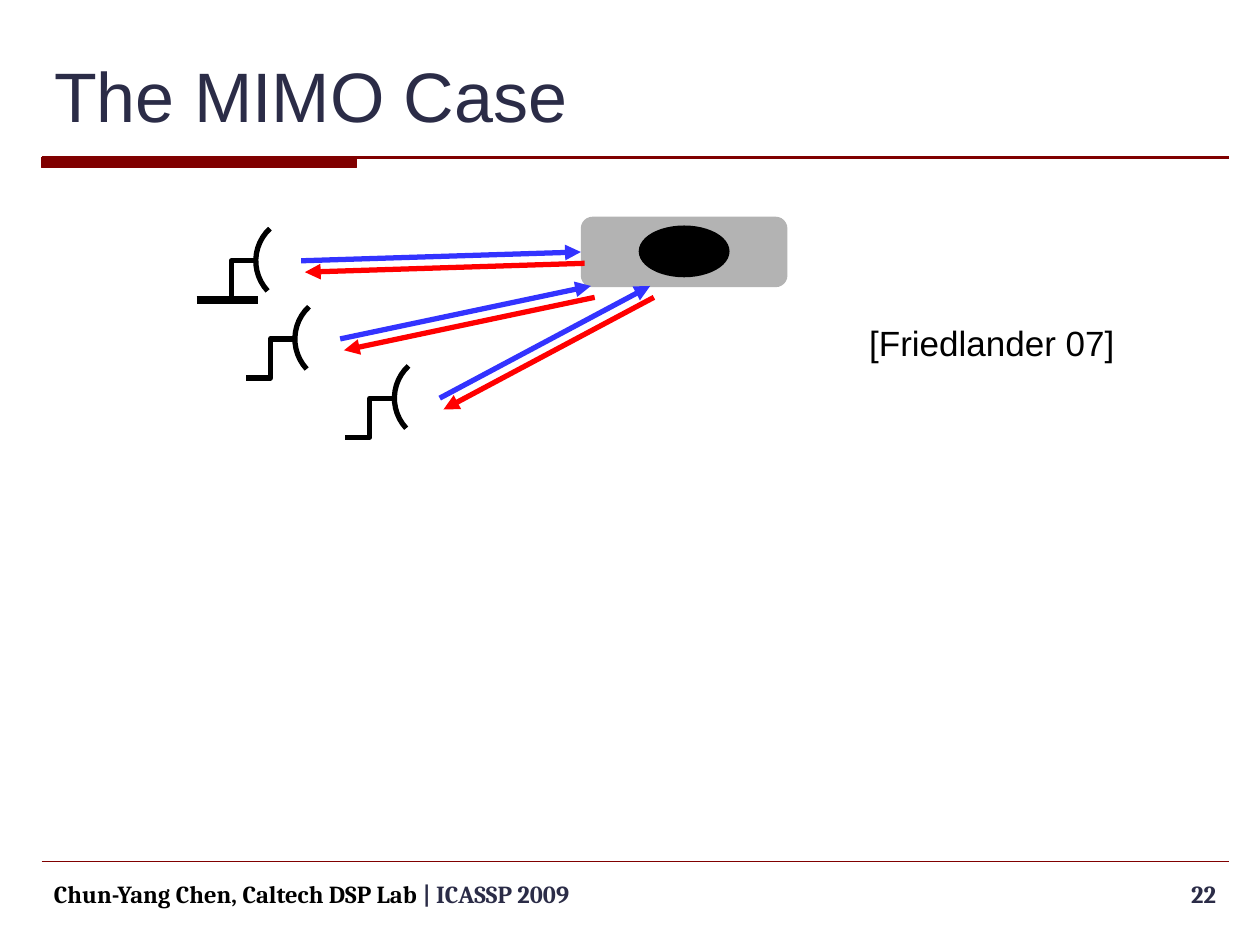
from dataclasses import dataclass

from lxml import etree
from pptx import Presentation
from pptx import util as u
from pptx.dml.color import RGBColor
from pptx.enum import shapes, text
from pptx.oxml.ns import qn


@dataclass(frozen=True)
class Theme:
    ink: str = "000000"
    navy: str = "2B2C47"
    rule: str = "800000"
    grey: str = "B3B3B3"
    white: str = "FFFFFF"
    sent: str = "3333FF"
    echo: str = "FF0000"
    sans: str = "Arial"
    serif: str = "Cambria"
    head: int = 40
    note: int = 20
    foot: int = 14


def put(par, words, size, font, color, bold=False, align=text.PP_ALIGN.LEFT):
    """Append a formatted run to a paragraph."""
    par.alignment = align
    run = par.add_run()
    run.text = words
    run.font.size = u.Pt(size)
    run.font.name = font
    run.font.bold = bold
    run.font.color.rgb = RGBColor.from_string(color)


class Deck:
    def __init__(self, theme):
        self.theme = theme
        self.prs = Presentation()
        self.prs.slide_width = u.Inches(10)
        self.prs.slide_height = u.Inches(7.5)
        self.slide = self.prs.slides.add_slide(self.prs.slide_layouts[5])
        self.tree = self.slide.shapes

    def title(self, words, *box):
        shape = self.tree.title
        shape.left, shape.top, shape.width, shape.height = map(u.Inches, box)
        frame = shape.text_frame
        frame.vertical_anchor = text.MSO_ANCHOR.MIDDLE
        put(frame.paragraphs[0], words, self.theme.head, self.theme.sans, self.theme.navy)

    def label(self, runs, *box, wrap=True, **style):
        """Add a text box; runs holds pairs of words and colour."""
        frame = self.tree.add_textbox(*map(u.Inches, box)).text_frame
        frame.word_wrap = wrap
        if not wrap:
            frame.auto_size = text.MSO_AUTO_SIZE.SHAPE_TO_FIT_TEXT
        for words, color in runs:
            put(frame.paragraphs[0], words, color=color, **style)

    def shape(self, kind, *box, fill, line=None, width=1, turn=0, tree=None):
        shape = (tree or self.tree).add_shape(kind, *map(u.Inches, box))
        shape.shadow.inherit = False
        shape.rotation = turn
        shape.fill.solid()
        shape.fill.fore_color.rgb = RGBColor.from_string(fill)
        if line:
            shape.line.color.rgb = RGBColor.from_string(line)
            shape.line.width = u.Pt(width)
        else:
            shape.line.fill.background()

    def line(self, start, end, color, width, tip=None, bent=False, tree=None):
        """Add a connector; tip is headEnd (at start) or tailEnd (at end)."""
        kind = shapes.MSO_CONNECTOR.ELBOW if bent else shapes.MSO_CONNECTOR.STRAIGHT
        wire = (tree or self.tree).add_connector(kind, *map(u.Inches, (*start, *end)))
        wire.line.color.rgb = RGBColor.from_string(color)
        wire.line.width = u.Pt(width)
        if tip:
            etree.SubElement(wire.line._get_or_add_ln(), qn(f"a:{tip}"), type="triangle")
        etree.SubElement(wire._element.spPr, qn("a:effectLst"))

    def dish(self, x, y):
        """Add an antenna whose stem meets the dish at x, y."""
        tree = self.tree.add_group_shape().shapes
        ink = self.theme.ink
        self.line((x, y), (x - 0.39, y + 0.31), ink, 3, bent=True, tree=tree)
        self.shape(shapes.MSO_SHAPE.ARC, x, y - 0.35, 0.7, 0.7, fill=self.theme.white,
                   line=ink, width=3, turn=227.1, tree=tree)


def main():
    theme = Theme()
    deck = Deck(theme)
    kinds = shapes.MSO_SHAPE

    # Frame of the page
    left, right = 0.33, 9.75
    deck.line((left, 1.25), (right, 1.25), theme.rule, 1.5)
    deck.shape(kinds.RECTANGLE, left, 1.25, 2.5, 0.08, fill=theme.rule,
               line=theme.rule, width=0.75)
    deck.line((left, 6.84), (right, 6.84), theme.rule, 0.75)
    deck.title("The MIMO Case", left, 0.25, right - left, 1)
    foot = dict(size=theme.foot, font=theme.serif, bold=True)
    deck.label([("22", theme.navy)], 8.7, 6.93, 1.05, 0.29,
               align=text.PP_ALIGN.RIGHT, **foot)
    deck.label([("Chun-Yang Chen, Caltech DSP Lab ", theme.ink),
                ("| ICASSP 2009", theme.navy)], left, 6.93, 8.29, 0.29, **foot)

    # Target, antennas and the ground under the first one
    deck.shape(kinds.ROUNDED_RECTANGLE, 4.61, 1.72, 1.64, 0.56, fill=theme.grey)
    deck.shape(kinds.OVAL, 5.08, 1.8, 0.7, 0.39, fill=theme.ink,
               line=theme.ink, width=1.5)
    feeds = [(2.03, 2.07), (2.34, 2.69), (3.13, 3.16)]
    hits = [(4.61, 2), (4.69, 2.27), (5.16, 2.27)]
    for feed in feeds:
        deck.dish(*feed)
    deck.line((1.56, 2.38), (2.05, 2.38), theme.ink, 4.5)

    # Each echo runs beside its transmitted beam
    for color, tip, dx, dy in ((theme.sent, "tailEnd", 0, 0),
                               (theme.echo, "headEnd", 0.03, 0.09)):
        for (x, y), (hx, hy) in zip(feeds, hits):
            deck.line((x + 0.36 + dx, y + dy), (hx + dx, hy + dy), color, 3, tip)

    deck.label([("[Friedlander 07]", theme.ink)], 6.8, 2.5, 2.16, 0.44,
               wrap=False, size=theme.note, font=theme.sans)
    deck.prs.save("out.pptx")


if __name__ == "__main__":
    main()
